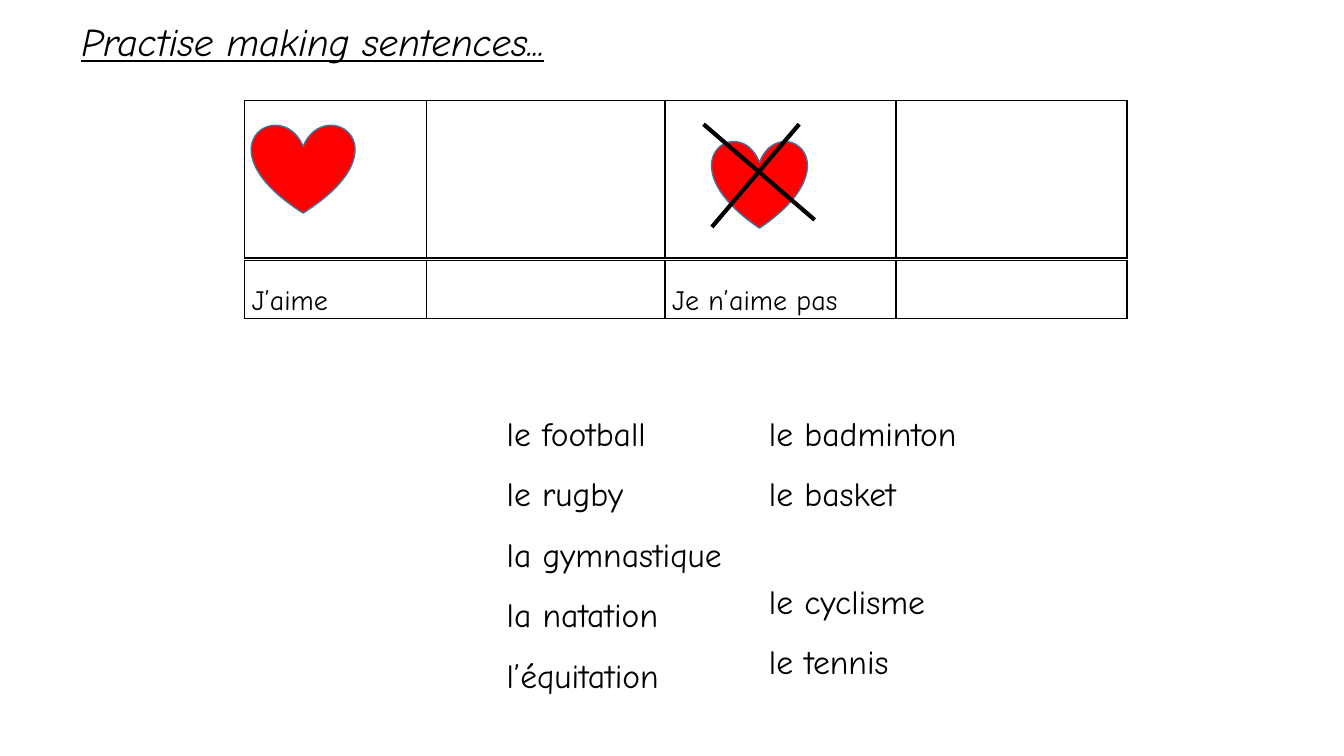
from lxml.etree import SubElement
from pptx import Presentation
from pptx.dml.color import RGBColor
from pptx.enum.shapes import MSO_CONNECTOR as Connector, MSO_SHAPE as Shape
from pptx.enum.text import MSO_ANCHOR as Anchor, MSO_AUTO_SIZE as AutoSize
from pptx.oxml.ns import qn
from pptx.util import Cm, Pt

BLACK = RGBColor(0x00, 0x00, 0x00)
RED = RGBColor(0xFF, 0x00, 0x00)
HEART_EDGE = RGBColor(0x43, 0x73, 0x9E)

COLUMN_WIDTHS = [4.57, 6.02, 5.82, 5.82]
LEFT_SPORTS = ["le football", "le rugby", "la gymnastique", "la natation", "l’équitation"]
RIGHT_SPORTS = ["le badminton", "le basket", "le cyclisme", "le tennis"]


class Worksheet:
    font_name = "Comic Neue"
    line_spacing = 1.15

    def __init__(self, slide):
        self.shapes = slide.shapes

    def style(self, paragraph, size):
        font = paragraph.font
        font.name, font.size = self.font_name, Pt(size)
        font.color.rgb = BLACK

    def title(self, text, left, top, width, height):
        frame = self.shapes.add_textbox(Cm(left), Cm(top), Cm(width), Cm(height)).text_frame
        frame.word_wrap = False
        frame.text = text
        heading = frame.paragraphs[0]
        self.style(heading, 28)
        heading.font.italic = heading.font.underline = True

    def word_list(self, words, left, top, width, height):
        """Add one spaced line per word and return the paragraphs."""
        frame = self.shapes.add_textbox(Cm(left), Cm(top), Cm(width), Cm(height)).text_frame
        frame.word_wrap = True
        frame.auto_size = AutoSize.SHAPE_TO_FIT_TEXT
        frame.text = "\n".join(words)
        for paragraph in frame.paragraphs:
            self.style(paragraph, 24)
            paragraph.line_spacing = self.line_spacing
            paragraph.space_after = Pt(10)
        return frame.paragraphs

    def table_row(self, texts, left, top, height):
        """Add a bordered table of a single row."""
        table = self.shapes.add_table(1, len(texts), Cm(left), Cm(top),
                                      Cm(sum(COLUMN_WIDTHS)), Cm(height)).table
        table.first_row = table.horz_banding = False
        table.rows[0].height = Cm(height)
        for column, width, cell, text in zip(table.columns, COLUMN_WIDTHS,
                                             table.iter_cells(), texts):
            column.width = Cm(width)
            cell.text = text
            cell.vertical_anchor = Anchor.BOTTOM
            cell.margin_left = cell.margin_right = Cm(0.18)
            cell.margin_top, cell.margin_bottom = Cm(0.03), Cm(0.03)
            phrase = cell.text_frame.paragraphs[0]
            phrase.line_spacing = self.line_spacing
            self.style(phrase, 20)
            self.border(cell)
            cell.fill.background()

    def border(self, cell):
        properties = cell._tc.get_or_add_tcPr()
        for side in ("a:lnL", "a:lnR", "a:lnT", "a:lnB"):
            edge = SubElement(properties, qn(side), w=str(Pt(1)))
            fill = SubElement(edge, qn("a:solidFill"))
            SubElement(fill, qn("a:srgbClr"), val=str(BLACK))

    def heart(self, left, top, width, height):
        heart = self.shapes.add_shape(Shape.HEART, Cm(left), Cm(top), Cm(width), Cm(height))
        heart.shadow.inherit = False
        heart.fill.solid()
        heart.fill.fore_color.rgb = RED
        heart.line.color.rgb = HEART_EDGE
        heart.line.width = Pt(1)

    def stroke(self, x1, y1, x2, y2):
        stroke = self.shapes.add_connector(Connector.STRAIGHT, Cm(x1), Cm(y1), Cm(x2), Cm(y2))
        stroke.line.color.rgb = BLACK
        stroke.line.width = Pt(3)
        SubElement(stroke._element.spPr, qn("a:effectLst"))


def main():
    deck = Presentation()
    deck.slide_width, deck.slide_height = Cm(33.87), Cm(19.05)
    sheet = Worksheet(deck.slides.add_slide(deck.slide_layouts[6]))

    sheet.title("Practise making sentences...", 1.8, 0.3, 13.46, 1.45)
    sheet.table_row(["", "", "", ""], 6.17, 2.53, 3.97)
    sheet.table_row(["J’aime", "", "Je n’aime pas", ""], 6.17, 6.57, 1.46)

    sheet.heart(6.34, 3.13, 2.6, 2.24)
    sheet.heart(17.94, 3.54, 2.4, 2.21)
    sheet.stroke(20.14, 3.13, 17.94, 5.72)
    sheet.stroke(17.73, 3.13, 20.53, 5.54)

    sheet.word_list(LEFT_SPORTS, 12.52, 10.13, 8.41, 7.57)
    right_lines = sheet.word_list(RIGHT_SPORTS, 19.13, 10.13, 5.74, 6.05)
    right_lines[RIGHT_SPORTS.index("le cyclisme")].space_before = Pt(33.5)

    deck.save("out.pptx")


if __name__ == "__main__":
    main()
